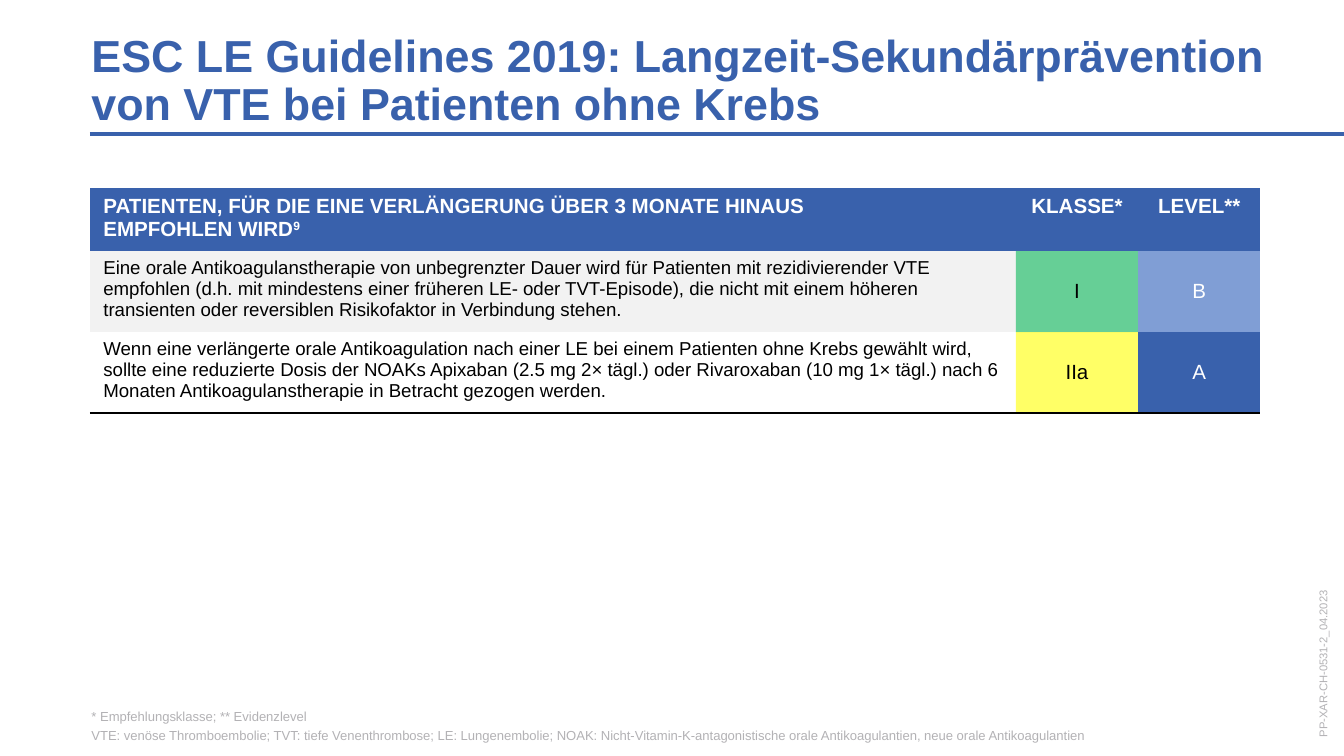
"""Build a slide on long-term secondary prevention of VTE in patients without cancer."""
from dataclasses import dataclass

from lxml.etree import SubElement
from pptx import Presentation
from pptx.dml.color import RGBColor
from pptx.enum.shapes import MSO_CONNECTOR as Connector
from pptx.enum.text import MSO_ANCHOR as Anchor, PP_ALIGN as Align
from pptx.oxml import parse_xml
from pptx.oxml.ns import nsdecls, qn
from pptx.util import Cm, Pt

FONT = "Arial"
BLUE, LIGHT_BLUE, GREY = "3961AC", "809ED5", "B3B2B5"
WHITE, BLACK, PALE = "FFFFFF", "000000", "F2F2F2"
GREEN, YELLOW = "00B050", "FFFF00"
LEFT, TEXT_LEFT, RULE_TOP = 1.7, 1.73, 2.54
COLUMNS = (17.5, 2.31, 2.31)
ROWS = (1.17, 1.53, 1.53)
PLAIN_STYLE = "{2D5ABB26-0587-4C30-8999-92F81FD0307C}"


@dataclass
class Label:
    text: str
    left: float
    top: float
    width: float
    height: float
    size: float
    color: str = GREY
    bold: bool = False
    anchor: Anchor = Anchor.BOTTOM
    wrap: bool = True
    rotation: float = 0
    line_spacing: float = 1.0
    space_after: float = 0


@dataclass
class Entry:
    text: str
    fill: str | None = None
    color: str = BLACK
    size: float = 11
    bold: bool = False
    align: Align = Align.CENTER
    anchor: Anchor = Anchor.MIDDLE
    opacity: int = 100
    superscript: str = ""
    underline: bool = False


LABELS = [
    Label("PP-XAR-CH-0531-2_04.2023", 23.22, 11.76, 3.56, 0.79, 6,
          anchor=Anchor.MIDDLE, wrap=False, rotation=270),
    Label("ESC LE Guidelines 2019: Langzeit-Sekundärprävention von VTE bei Patienten ohne Krebs",
          TEXT_LEFT, 0.61, 22.99, 1.85, 24, BLUE, bold=True, line_spacing=0.9),
    Label("* Empfehlungsklasse; ** Evidenzlevel\n"
          "VTE: venöse Thromboembolie; TVT: tiefe Venenthrombose; LE: Lungenembolie; "
          "NOAK: Nicht-Vitamin-K-antagonistische orale Antikoagulantien, "
          "neue orale Antikoagulantien",
          TEXT_LEFT, 13.39, 21.97, 0.66, 7, space_after=2),
]


def heading(text: str, align: Align = Align.CENTER, superscript: str = "") -> Entry:
    """Return a header cell."""
    return Entry(text, BLUE, WHITE, bold=True, align=align, anchor=Anchor.TOP,
                 superscript=superscript)


def statement(text: str, fill: str | None = None, underline: bool = False) -> Entry:
    """Return a cell that holds a recommendation."""
    return Entry(text, fill, size=10, align=Align.LEFT, anchor=Anchor.TOP, underline=underline)


ENTRIES = [
    [heading("PATIENTEN, FÜR DIE EINE VERLÄNGERUNG ÜBER 3 MONATE HINAUS\nEMPFOHLEN WIRD",
             Align.LEFT, "9"),
     heading("KLASSE*"), heading("LEVEL**")],
    [statement("Eine orale Antikoagulanstherapie von unbegrenzter Dauer wird für Patienten mit "
               "rezidivierender VTE empfohlen (d.h. mit mindestens einer früheren LE- oder "
               "TVT-Episode), die nicht mit einem höheren transienten oder reversiblen "
               "Risikofaktor in Verbindung stehen.", PALE),
     Entry("I", GREEN, opacity=60), Entry("B", LIGHT_BLUE, WHITE)],
    [statement("Wenn eine verlängerte orale Antikoagulation nach einer LE bei einem Patienten "
               "ohne Krebs gewählt wird, sollte eine reduzierte Dosis der NOAKs Apixaban "
               "(2.5 mg 2× tägl.) oder Rivaroxaban (10 mg 1× tägl.) nach 6 Monaten "
               "Antikoagulanstherapie in Betracht gezogen werden.", underline=True),
     Entry("IIa", YELLOW, opacity=60, underline=True),
     Entry("A", BLUE, WHITE, underline=True)],
]


def paint(target, color: str) -> None:
    """Give a font, fill or line a solid colour."""
    target.rgb = RGBColor.from_string(color)


def assign(target, values: dict) -> None:
    """Set attributes from a dict of format values."""
    for name, value in values.items():
        setattr(target, name, value)


def style_spans(para, item: Label | Entry) -> None:
    """Format every span of a paragraph."""
    for span in para.runs:
        assign(span.font, {"name": FONT, "size": Pt(item.size), "bold": item.bold})
        paint(span.font.color, item.color)


def draw_label(page, label: Label) -> None:
    """Draw a text box without margins."""
    box = page.shapes.add_textbox(Cm(label.left), Cm(label.top), Cm(label.width), Cm(label.height))
    box.rotation = label.rotation
    frame = box.text_frame
    assign(frame, {"margin_left": 0, "margin_top": 0, "margin_right": 0, "margin_bottom": 0,
                   "word_wrap": label.wrap, "vertical_anchor": label.anchor})
    frame.text = label.text
    for para in frame.paragraphs:
        assign(para, {"line_spacing": label.line_spacing, "space_after": Pt(label.space_after)})
        style_spans(para, label)


def draw_rule(page) -> None:
    """Draw the line below the title up to the slide edge."""
    rule = page.shapes.add_connector(Connector.STRAIGHT, Cm(LEFT), Cm(RULE_TOP),
                                     Cm(25.4), Cm(RULE_TOP))
    rule.line.width = Pt(2.25)
    paint(rule.line.color, BLUE)
    SubElement(rule._element.spPr, qn("a:effectLst"))


def fill_cell(cell, entry: Entry) -> None:
    """Write and format one table cell."""
    cell.vertical_anchor = entry.anchor
    para = cell.text_frame.paragraphs[0]
    para.text = entry.text
    para.alignment = entry.align
    if entry.superscript:
        span = para.add_run()
        span.text = entry.superscript
        span.font._element.set("baseline", "30000")
    style_spans(para, entry)
    if entry.fill:
        cell.fill.solid()
        paint(cell.fill.fore_color, entry.fill)
    else:
        cell.fill.background()
    properties = cell._tc.get_or_add_tcPr()
    if entry.opacity < 100:
        tone = properties.find(".//" + qn("a:srgbClr"))
        SubElement(tone, qn("a:alpha"), val=str(entry.opacity * 1000))
    if entry.underline:
        properties.insert(0, parse_xml(
            f'<a:lnB {nsdecls("a")} w="{Pt(1)}"><a:solidFill>'
            f'<a:srgbClr val="{BLACK}"/></a:solidFill></a:lnB>'))


def draw_table(page) -> None:
    """Draw the table of recommendations."""
    table = page.shapes.add_table(len(ROWS), len(COLUMNS), Cm(LEFT), Cm(3.56),
                                  Cm(sum(COLUMNS)), Cm(sum(ROWS))).table
    table.horz_banding = False
    table._tbl.tblPr.find(qn("a:tableStyleId")).text = PLAIN_STYLE
    for column, width in zip(table.columns, COLUMNS):
        column.width = Cm(width)
    for row, height, entries in zip(table.rows, ROWS, ENTRIES):
        row.height = Cm(height)
        for cell, entry in zip(row.cells, entries):
            fill_cell(cell, entry)


def main() -> None:
    """Build and save the deck."""
    deck = Presentation()
    deck.slide_width, deck.slide_height = Cm(25.4), Cm(14.29)
    page = deck.slides.add_slide(deck.slide_layouts[6])
    draw_rule(page)
    for label in LABELS:
        draw_label(page, label)
    draw_table(page)
    deck.save("out.pptx")


if __name__ == "__main__":
    main()
